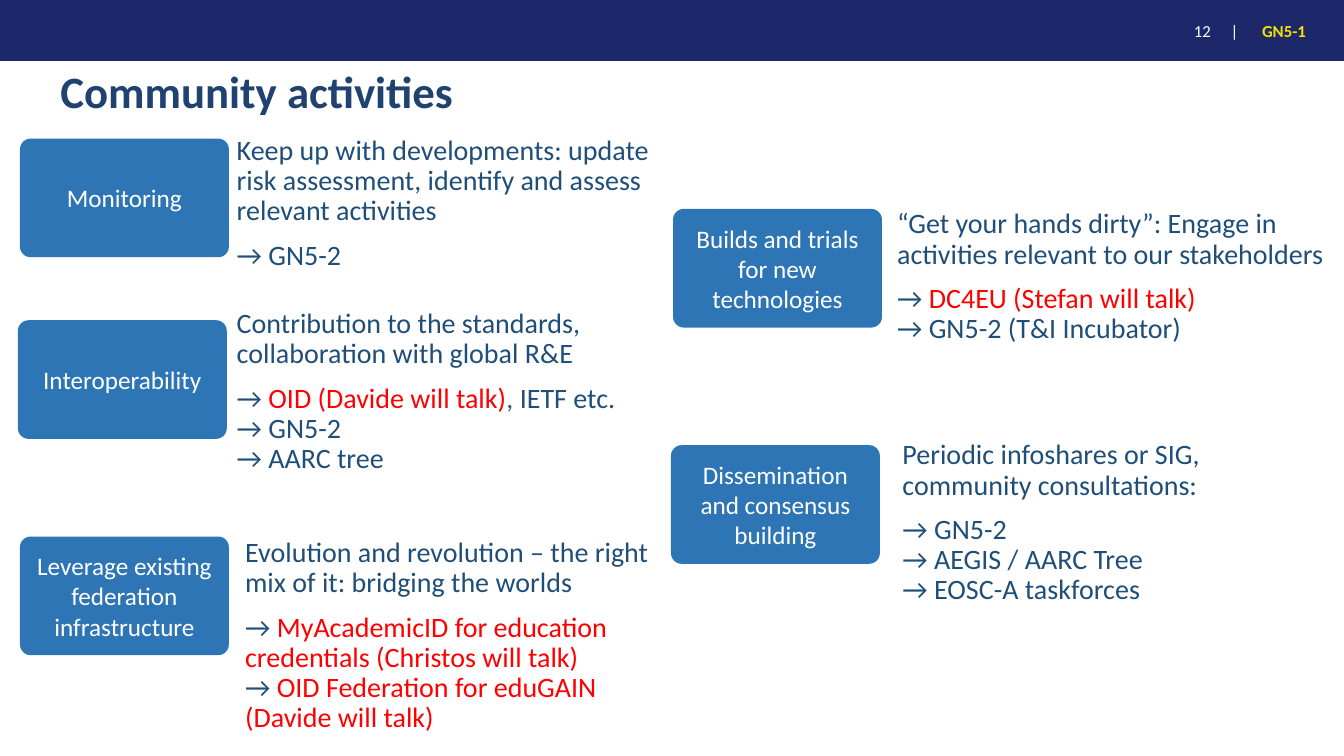
from pptx import Presentation
from pptx.dml.color import RGBColor
from pptx.enum.shapes import MSO_SHAPE
from pptx.enum.text import MSO_ANCHOR, PP_ALIGN
from pptx.oxml import parse_xml
from pptx.oxml.ns import nsdecls
from pptx.util import Pt

PX = 9525
COLORS = {"bar": "1D286B", "white": "FFFFFF", "yellow": "F4E200", "title": "1F4270",
          "card": "2E75B6", "body": "1F4E79", "talk": "FF0000", "grey": "44546A"}
CARD_W, CARD_H = 199, 113

ACTIVITIES = [
    ((19, 132), (216, 125, 420, 148), "Monitoring",
     "Keep up with developments: update risk assessment, identify and assess relevant activities",
     [[("→ GN5-2", "body")]]),
    ((17, 305), (216, 290, 411, 173), "Interoperability",
     "Contribution to the standards, collaboration with global R&E",
     [[("→ ", "body"), ("OID (Davide will talk)", "talk"), (", ", "grey"), ("IETF etc.", "body")],
      [("→ GN5-2", "body")],
      [("→ AARC tree", "body")]]),
    ((19, 511), (224, 508, 429, 163), "Leverage existing federation infrastructure",
     "Evolution and revolution – the right mix of it: bridging the worlds",
     [[("→ ", "body"), ("MyAcademicID for education credentials (Christos will talk)", "talk")],
      [("→", "body"), (" OID Federation for eduGAIN (Davide will talk)", "talk")]]),
    ((641, 199), (845, 195, 441, 177), "Builds and trials for new technologies",
     "“Get your hands dirty”: Engage in activities relevant to our stakeholders",
     [[("→ ", "body"), ("DC4EU (Stefan will talk)", "talk")],
      [("→ GN5-2 (T&I Incubator)", "body")]]),
    ((639, 424), (850, 415, 403, 142), "Dissemination and consensus building",
     "Periodic infoshares or SIG, community consultations:",
     [[("→ GN5-2", "body")],
      [("→ AEGIS / AARC Tree", "body")],
      [("→ EOSC-A taskforces", "body")]]),
]


def emu(*lengths):
    return [n * PX for n in lengths]


def style(r, size, color, bold=False):
    r.font.name = "Calibri"
    r.font.size = Pt(size)
    r.font.bold = bold
    r.font.color.rgb = RGBColor.from_string(COLORS[color])


def set_text(tf, text, size, color, bold=False, align=PP_ALIGN.LEFT):
    tf.text = text
    tf.word_wrap = True
    p = tf.paragraphs[0]
    p.alignment = align
    for r in p.runs:
        style(r, size, color, bold)
    return p


def add_block(s, kind, box, color):
    sp = s.shapes.add_shape(kind, *emu(*box))
    sp.shadow.inherit = False
    sp.fill.solid()
    sp.fill.fore_color.rgb = RGBColor.from_string(COLORS[color])
    sp.line.fill.background()
    return sp


def add_label(s, box, text, color, bold=False):
    tf = s.shapes.add_textbox(*emu(*box)).text_frame
    tf.margin_left = tf.margin_right = 0
    tf.vertical_anchor = MSO_ANCHOR.MIDDLE
    return set_text(tf, text, 12, color, bold)


def add_header(s, box):
    x, y, w, h = box
    add_block(s, MSO_SHAPE.RECTANGLE, box, "bar")
    p = add_label(s, (x + w - 143, y + 12, 50, 34), "12\t|", "white")
    p._p.get_or_add_pPr().append(parse_xml(
        f'<a:tabLst {nsdecls("a")}><a:tab pos="{35 * PX}" algn="l"/></a:tabLst>'))
    add_label(s, (x + w - 78, y + 12, 70, 34), "GN5-1", "yellow", True)


def add_title(s, box, text):
    sp = s.shapes.title
    sp.left, sp.top, sp.width, sp.height = emu(*box)
    sp.text_frame.vertical_anchor = MSO_ANCHOR.MIDDLE
    set_text(sp.text_frame, text, 32, "title", True).line_spacing = 0.9


def add_card(s, box, text):
    sp = add_block(s, MSO_SHAPE.ROUNDED_RECTANGLE, box, "card")
    sp.adjustments[0] = 0.09
    sp.text_frame.vertical_anchor = MSO_ANCHOR.MIDDLE
    set_text(sp.text_frame, text, 18, "white", align=PP_ALIGN.CENTER)


def add_details(s, box, summary, lines):
    tf = s.shapes.add_textbox(*emu(*box)).text_frame
    set_text(tf, summary, 20, "body").line_spacing = 0.9
    p = tf.add_paragraph()
    p.line_spacing = 0.9
    p.space_before = Pt(10)
    for i, line in enumerate(lines):
        if i:
            p.add_line_break()
        for text, color in line:
            r = p.add_run()
            r.text = text
            style(r, 20, color)


def main():
    prs = Presentation()
    prs.slide_width, prs.slide_height = emu(1280, 720)
    s = prs.slides.add_slide(prs.slide_layouts[5])
    add_header(s, (0, 0, 1280, 58))
    add_title(s, (48, 50, 986, 79), "Community activities")
    for corner, box, name, summary, lines in ACTIVITIES:
        add_card(s, (*corner, CARD_W, CARD_H), name)
        add_details(s, box, summary, lines)
    prs.save("out.pptx")


if __name__ == "__main__":
    main()
